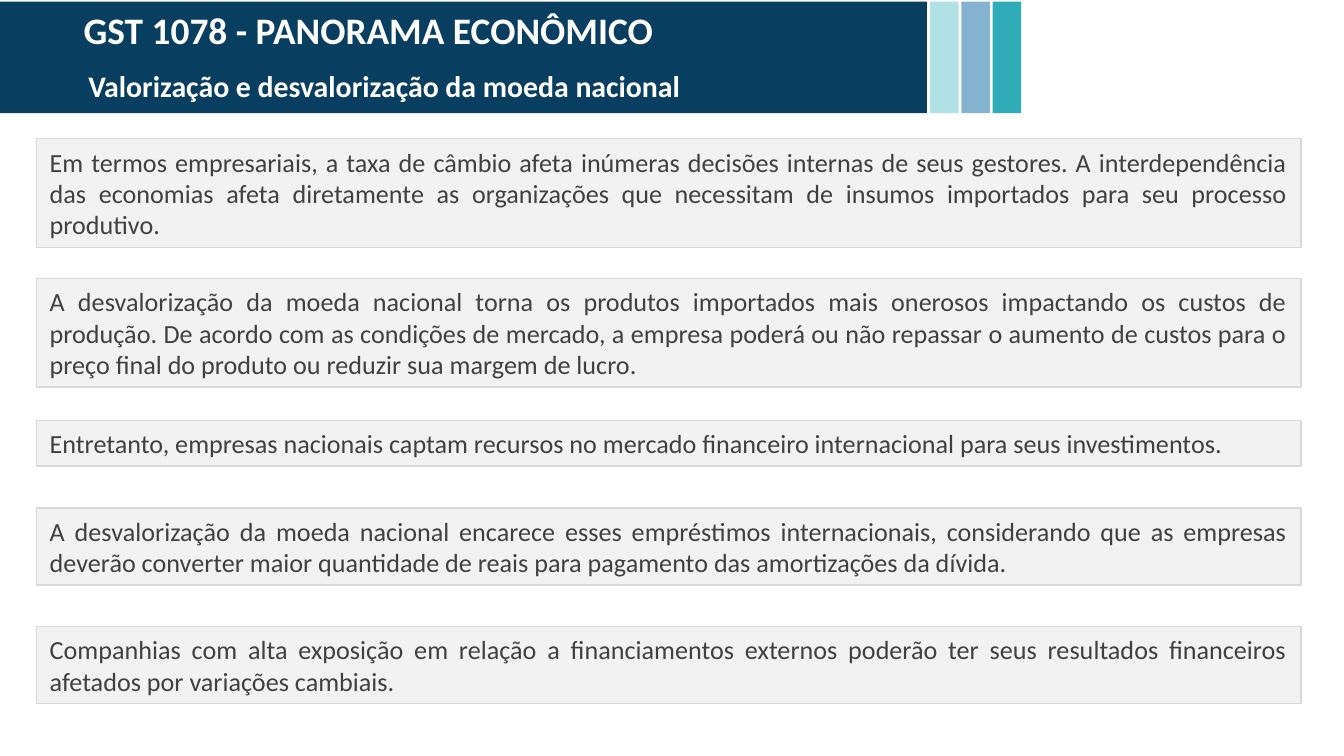
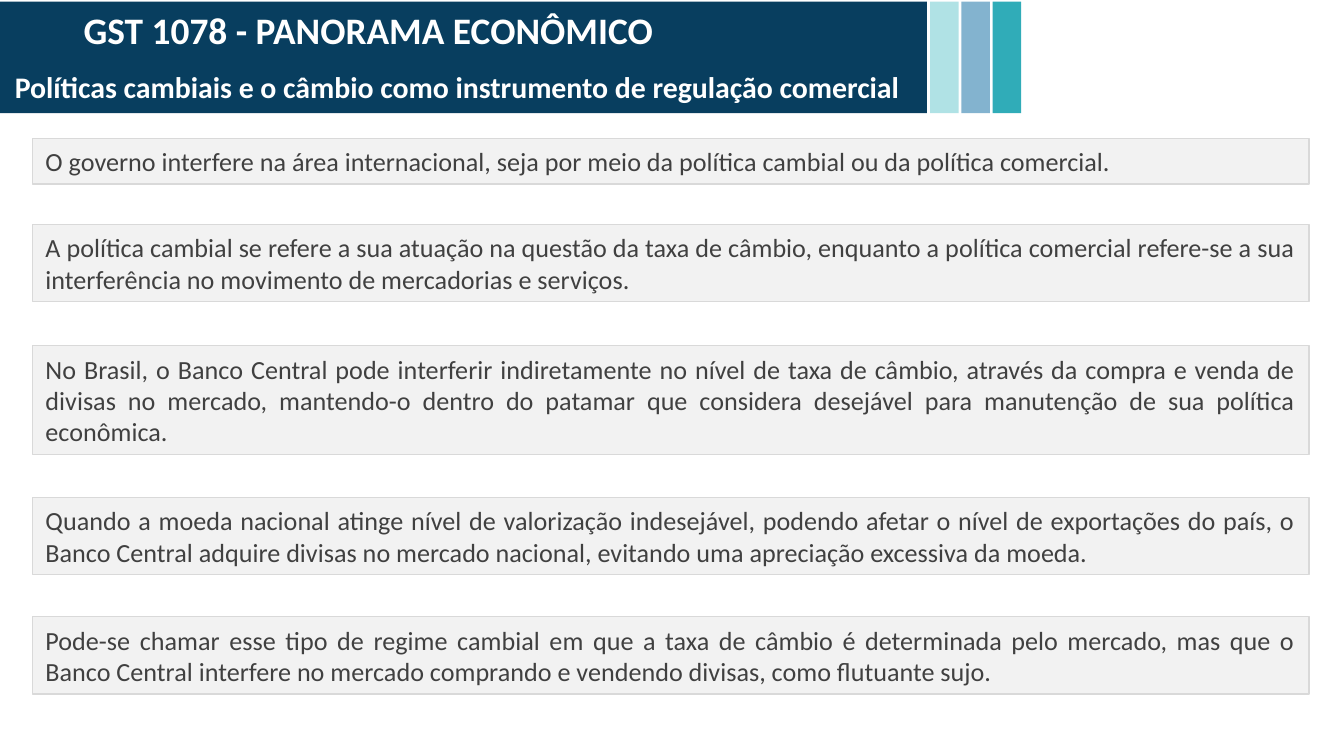
from pptx import Presentation
from pptx.dml.color import RGBColor
from pptx.enum.shapes import MSO_SHAPE as Shape
from pptx.enum.text import MSO_ANCHOR as Anchor, MSO_AUTO_SIZE as AutoSize, PP_ALIGN as Align
from pptx.util import Cm, Pt

NAVY = RGBColor(0x08, 0x3E, 0x5F)
ACCENTS = [
    RGBColor(0xB0, 0xE2, 0xE5),
    RGBColor(0x83, 0xB3, 0xCF),
    RGBColor(0x30, 0xAC, 0xB8),
]
WHITE = RGBColor(0xFF, 0xFF, 0xFF)
PANEL = RGBColor(0xF2, 0xF2, 0xF2)
BORDER = RGBColor(0xD9, 0xD9, 0xD9)
INK = RGBColor(0x40, 0x40, 0x40)
FONT = "Calibri"
COURSE = "GST 1078 - PANORAMA ECONÔMICO"

VALUATION = [
    (2.62, 3, "Em termos empresariais, a taxa de câmbio afeta inúmeras decisões internas de seus "
              "gestores. A interdependência das economias afeta diretamente as organizações que "
              "necessitam de insumos importados para seu processo produtivo."),
    (5.26, 3, "A desvalorização da moeda nacional torna os produtos importados mais onerosos "
              "impactando os custos de produção. De acordo com as condições de mercado, a empresa "
              "poderá ou não repassar o aumento de custos para o preço final do produto ou reduzir "
              "sua margem de lucro."),
    (7.95, 1, "Entretanto, empresas nacionais captam recursos no mercado financeiro internacional "
              "para seus investimentos."),
    (9.6, 2, "A desvalorização da moeda nacional encarece esses empréstimos internacionais, "
             "considerando que as empresas deverão converter maior quantidade de reais para "
             "pagamento das amortizações da dívida."),
    (11.84, 2, "Companhias com alta exposição em relação a financiamentos externos poderão ter seus "
               "resultados financeiros afetados por variações cambiais."),
]
POLICIES = [
    (2.62, 1, "O governo interfere na área internacional, seja por meio da política cambial ou da "
              "política comercial."),
    (4.24, 2, "A política cambial se refere a sua atuação na questão da taxa de câmbio, enquanto a "
              "política comercial refere-se a sua interferência no movimento de mercadorias e "
              "serviços."),
    (6.53, 3, "No Brasil, o Banco Central pode interferir indiretamente no nível de taxa de câmbio, "
              "através da compra e venda de divisas no mercado, mantendo-o dentro do patamar que "
              "considera desejável para manutenção de sua política econômica."),
    (9.4, 2, "Quando a moeda nacional atinge nível de valorização indesejável, podendo afetar o "
             "nível de exportações do país, o Banco Central adquire divisas no mercado nacional, "
             "evitando uma apreciação excessiva da moeda."),
    (11.66, 2, "Pode-se chamar esse tipo de regime cambial em que a taxa de câmbio é determinada "
               "pelo mercado, mas que o Banco Central interfere no mercado comprando e vendendo "
               "divisas, como flutuante sujo."),
]


def write(box, text, size, color, align, bold=False, wrap=True):
    frame = box.text_frame
    frame.auto_size = AutoSize.NONE
    frame.word_wrap = wrap
    frame.vertical_anchor = Anchor.MIDDLE
    frame.margin_left = frame.margin_right = Cm(0.25)
    frame.margin_top = frame.margin_bottom = Cm(0.13)
    para = frame.paragraphs[0]
    para.alignment = align
    span = para.add_run()
    span.text = text
    span.font.name = FONT
    span.font.size = Pt(size)
    span.font.bold = bold
    span.font.color.rgb = color


def add_rectangle(page, left, top, width, height, fill, border=None):
    box = page.shapes.add_shape(Shape.RECTANGLE, Cm(left), Cm(top), Cm(width), Cm(height))
    box.shadow.inherit = False
    box.fill.solid()
    box.fill.fore_color.rgb = fill
    if border is None:
        box.line.fill.background()
    else:
        box.line.color.rgb = border
        box.line.width = Pt(0.75)
    return box


def add_layout_bands(page):
    bands = [add_rectangle(page, -0.05, 0.03, 17.57, 2.11, NAVY)]
    for index, color in enumerate(ACCENTS):
        bands.append(add_rectangle(page, 17.58 + 0.59 * index, 0.03, 0.54, 2.11, color))
    for band in bands:
        page.slide_layout.shapes.element.append(band.element)


def add_heading(page, subtitle, left, top, width):
    title = page.shapes.title
    title.left, title.top, title.width, title.height = Cm(0.03), Cm(0), Cm(13.87), Cm(1.11)
    write(title, COURSE, 20, WHITE, Align.CENTER, bold=True)
    box = page.shapes.add_textbox(Cm(left), Cm(top), Cm(width), Cm(0.94))
    write(box, subtitle, 16, WHITE, Align.LEFT, bold=True, wrap=False)


def add_panels(page, left, width, panels):
    for top, lines, text in panels:
        box = add_rectangle(page, left, top, width, 0.26 + 0.6 * lines, PANEL, BORDER)
        write(box, text, 14, INK, Align.JUSTIFY)


def main():
    deck = Presentation()
    deck.slide_width, deck.slide_height = Cm(25.4), Cm(14.29)
    layout = deck.slide_layouts[5]

    valuation = deck.slides.add_slide(layout)
    add_layout_bands(valuation)
    add_heading(valuation, "Valorização e desvalorização da moeda nacional", 1.42, 1.14, 11.84)
    add_panels(valuation, 0.69, 23.9, VALUATION)

    policies = deck.slides.add_slide(layout)
    add_heading(policies, "Políticas cambiais e o câmbio como instrumento de regulação comercial",
                0.03, 1.17, 17.45)
    add_panels(policies, 0.61, 24.13, POLICIES)

    deck.save("out.pptx")


if __name__ == "__main__":
    main()
